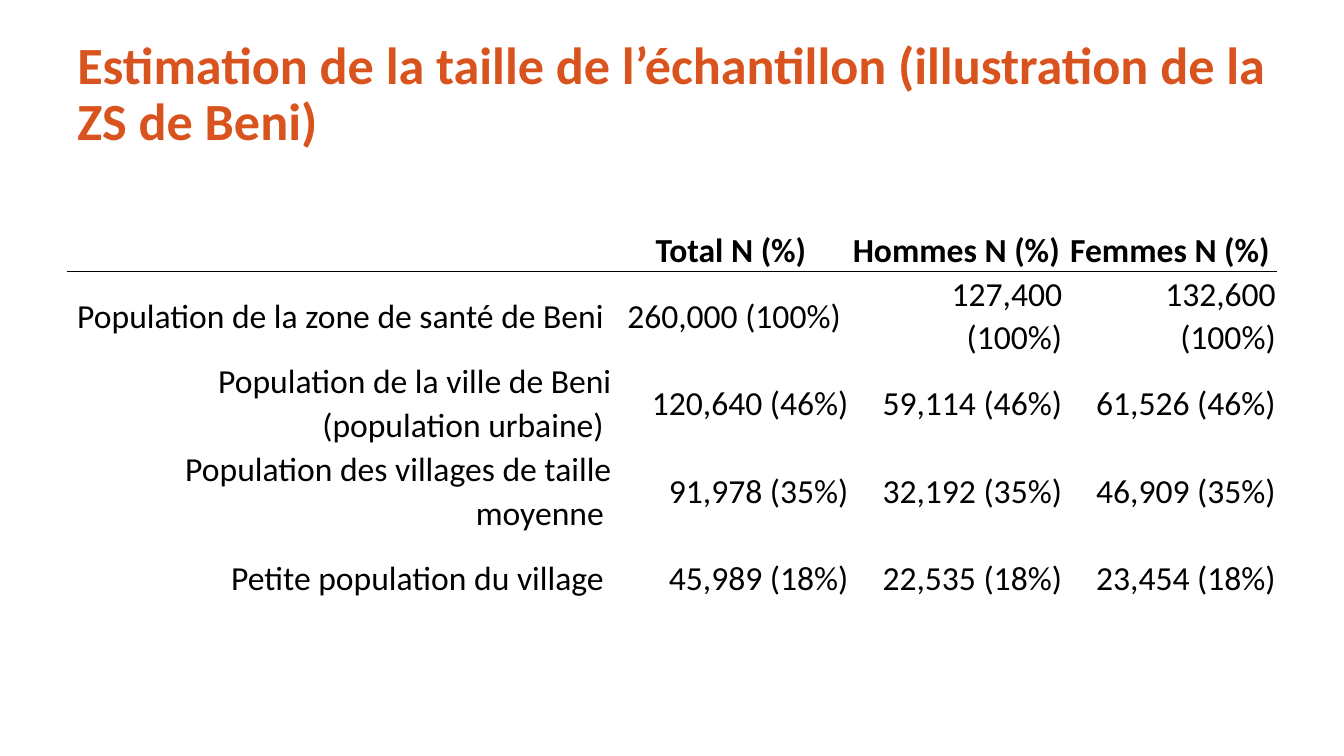
from dataclasses import dataclass

from lxml.etree import SubElement
from pptx import Presentation
from pptx.dml.color import RGBColor
from pptx.enum.text import MSO_ANCHOR, PP_ALIGN
from pptx.oxml.ns import qn
from pptx.util import Pt


@dataclass(frozen=True)
class Theme:
    font: str = "Calibri"
    accent: str = "D9531E"
    ink: str = "000000"
    title_size: float = 37.3
    table_size: float = 24


THEME = Theme()
LEFT, WIDTH = 48, 864
TITLE = "Estimation de la taille de l’échantillon (illustration de la ZS de Beni)"
COLUMN_WIDTHS = (389.4, 169.4, 152.6, 152.6)
ROW_HEIGHT = 61.8
ROWS = (
    ("", "Total N (%)", "Hommes N (%)", "Femmes N (%)"),
    ("Population de la zone de santé de Beni ", "260,000 (100%) ", "127,400 (100%)", "132,600 (100%)"),
    ("Population de la ville de Beni (population urbaine) ", "120,640 (46%)", "59,114 (46%)", "61,526 (46%)"),
    ("Population des villages de taille moyenne ", "91,978 (35%)", "32,192 (35%)", "46,909 (35%)"),
    ("Petite population du village ", "45,989 (18%)", "22,535 (18%)", "23,454 (18%)"),
)


def style_font(paragraph, size, color, bold):
    font = paragraph.font
    font.name = THEME.font
    font.size = Pt(size)
    font.bold = bold
    font.color.rgb = RGBColor.from_string(color)


def add_title(slide):
    title = slide.shapes.title
    title.left, title.top, title.width, title.height = Pt(LEFT), Pt(21.6), Pt(WIDTH), Pt(90)
    frame = title.text_frame
    frame.text = TITLE
    frame.word_wrap = True
    frame.vertical_anchor = MSO_ANCHOR.BOTTOM
    paragraph = frame.paragraphs[0]
    paragraph.alignment = PP_ALIGN.LEFT
    paragraph.line_spacing = Pt(40)
    style_font(paragraph, THEME.title_size, THEME.accent, True)


def add_border(cell, side):
    properties = cell._tc.get_or_add_tcPr()
    line = SubElement(properties, qn(f"a:{side}"), w=str(Pt(1)))
    fill = SubElement(line, qn("a:solidFill"))
    SubElement(fill, qn("a:srgbClr"), val=THEME.ink)


def fill_cell(cell, text, is_header):
    cell.fill.background()
    cell.margin_left = cell.margin_right = Pt(0.72)
    cell.margin_top = cell.margin_bottom = Pt(0)
    cell.vertical_anchor = MSO_ANCHOR.BOTTOM if is_header else MSO_ANCHOR.MIDDLE
    cell.text = text
    paragraph = cell.text_frame.paragraphs[0]
    paragraph.alignment = PP_ALIGN.CENTER if is_header else PP_ALIGN.RIGHT
    paragraph.line_spacing = 1.07
    paragraph.space_after = Pt(8)
    style_font(paragraph, THEME.table_size, THEME.ink, is_header)


def add_population_table(slide):
    frame = slide.shapes.add_table(
        len(ROWS), len(COLUMN_WIDTHS), Pt(LEFT), Pt(132), Pt(WIDTH), Pt(ROW_HEIGHT * len(ROWS))
    )
    table = frame.table
    table.first_row = table.horz_banding = False
    for column, width in zip(table.columns, COLUMN_WIDTHS):
        column.width = Pt(width)
    for row_index, (row, texts) in enumerate(zip(table.rows, ROWS)):
        row.height = Pt(ROW_HEIGHT)
        for cell, text in zip(row.cells, texts):
            if row_index < 2:
                add_border(cell, "lnB" if row_index == 0 else "lnT")
            fill_cell(cell, text, row_index == 0)


def main():
    presentation = Presentation()
    presentation.slide_width, presentation.slide_height = Pt(960), Pt(540)
    slide = presentation.slides.add_slide(presentation.slide_layouts[5])
    add_title(slide)
    add_population_table(slide)
    presentation.save("out.pptx")


if __name__ == "__main__":
    main()
